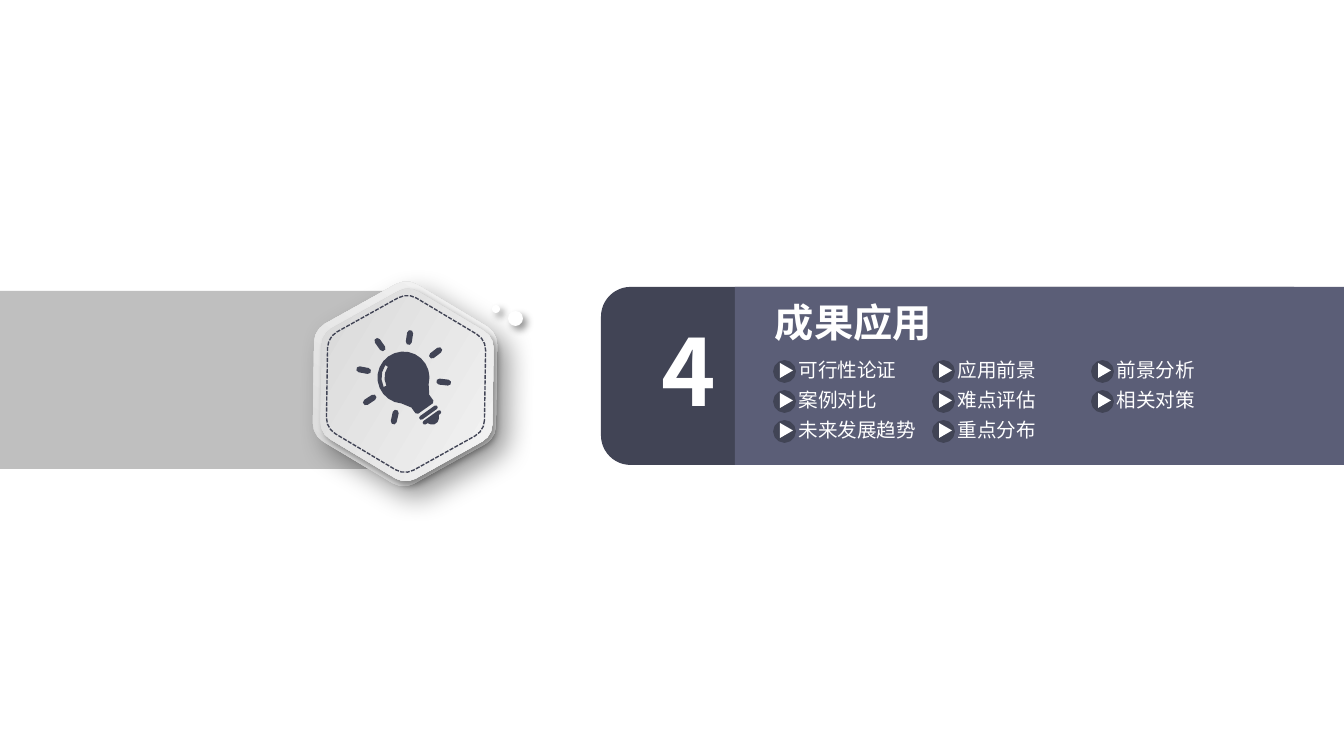
from dataclasses import dataclass
from math import atan2, cos, degrees, radians, sin, sqrt
from typing import Optional

from lxml.etree import SubElement
from pptx import Presentation
from pptx.dml.color import RGBColor
from pptx.enum.dml import MSO_LINE as Dash
from pptx.enum.shapes import MSO_SHAPE as Kind
from pptx.enum.text import MSO_AUTO_SIZE as Auto, PP_ALIGN as Align
from pptx.oxml.ns import qn
from pptx.util import Emu, Pt

SCALE = 9144000 / 1344
FONT = "Noto Sans CJK SC"
WHITE, DARK, SLATE, GREY = "FFFFFF", "414455", "5B5E77", "BFBFBF"
PALE, DIM = "F9F9F9", "D3D3D3"


@dataclass
class Shade:
    blur: int
    dist: int


@dataclass
class Plate:
    x: int
    y: int
    high: int
    angle: Optional[int] = None
    shade: Optional[Shade] = None


@dataclass
class Item:
    text: str
    col: int
    row: int


SOFT = Shade(4, 3)
PLATES = [
    Plate(405, 384, 183, 90, Shade(15, 9)),
    Plate(407, 385, 172, 0, SOFT),
    Plate(406, 384, 158),
]
ROWS = [
    ["可行性论证", "应用前景", "前景分析"],
    ["案例对比", "难点评估", "相关对策"],
    ["未来发展趋势", "重点分布"],
]
ITEMS = [Item(text, c, r) for r, row in enumerate(ROWS) for c, text in enumerate(row)]


def px(n: float) -> Emu:
    return Emu(round(n * SCALE))


def tint(code: str) -> RGBColor:
    return RGBColor.from_string(code)


def cast(shape, shade: Shade) -> None:
    box = shape._element.spPr.find(qn("a:effectLst"))
    drop = SubElement(box, qn("a:outerShdw"), blurRad=str(Pt(shade.blur)),
                      dist=str(Pt(shade.dist)), dir="2700000", algn="tl", rotWithShape="0")
    color = SubElement(drop, qn("a:srgbClr"), val="000000")
    SubElement(color, qn("a:alpha"), val="40000")


def style(shape, fill: Optional[str] = None, line: Optional[str] = None,
          width: float = 1, shade: Optional[Shade] = None) -> None:
    shape.shadow.inherit = False
    if fill:
        shape.fill.solid()
        shape.fill.fore_color.rgb = tint(fill)
    else:
        shape.fill.background()
    if line:
        shape.line.color.rgb = tint(line)
        shape.line.width = Pt(width)
    else:
        shape.line.fill.background()
    if shade:
        cast(shape, shade)


def block(slide, kind, x: int, y: int, w: int, h: int, turn: int = 0, **look) -> None:
    shape = slide.shapes.add_shape(kind, px(x), px(y), px(w), px(h))
    shape.rotation = turn
    style(shape, **look)


def label(slide, text: str, x: int, y: int, w: int, h: int, size: float,
          bold: bool = False, align=Align.LEFT, pad: tuple = (0, 0)) -> None:
    frame = slide.shapes.add_textbox(px(x), px(y), px(w), px(h)).text_frame
    frame.word_wrap = True
    frame.auto_size = Auto.SHAPE_TO_FIT_TEXT
    frame.margin_left = frame.margin_right = px(pad[0])
    frame.margin_top = frame.margin_bottom = px(pad[1])
    para = frame.paragraphs[0]
    para.alignment = align
    run = para.add_run()
    run.text = text
    font = run.font
    font.size, font.bold, font.name = Pt(size), bold, FONT
    font.color.rgb = tint(WHITE)
    SubElement(run._r.get_or_add_rPr(), qn("a:ea"), typeface=FONT)


def arc(x: float, y: float, r: float, start: float, end: float, steps: int = 3) -> list:
    turns = [radians(start + (end - start) * i / steps) for i in range(steps + 1)]
    return [(x + r * cos(t), y + r * sin(t)) for t in turns]


def pill(x1: float, y1: float, x2: float, y2: float, r: float) -> list:
    way = degrees(atan2(y2 - y1, x2 - x1))
    return arc(x2, y2, r, way - 90, way + 90) + arc(x1, y1, r, way + 90, way + 270)


def outline(slide, loops: list, x: int, y: int, turn: float):
    paths = [[(px(a), px(b)) for a, b in loop] for loop in loops]
    pen = slide.shapes.build_freeform(*paths[0][0], scale=1.0)
    for i, points in enumerate(paths):
        if i:
            pen.move_to(*points[0])
        pen.add_line_segments(points[1:], close=True)
    shape = pen.convert_to_shape()
    shape.left, shape.top = px(x) - shape.width // 2, px(y) - shape.height // 2
    shape.rotation = turn
    return shape


def hexagon(high: int) -> list:
    side = high / sqrt(3)
    bend = side * 0.2
    reach = side - bend / cos(radians(30))
    return [p for a in range(0, 360, 60)
            for p in arc(reach * cos(radians(a)), reach * sin(radians(a)), bend, a - 30, a + 30)]


def badge(slide, plate: Plate) -> None:
    shape = outline(slide, [hexagon(plate.high)], plate.x, plate.y, 30.9)
    if plate.angle is None:
        style(shape, line=DARK, width=0.75)
        shape.line.dash_style = Dash.SQUARE_DOT
        return
    style(shape, shade=plate.shade)
    shape.fill.gradient()
    shape.fill.gradient_angle = plate.angle
    for stop, code, place in zip(shape.fill.gradient_stops, (DIM, PALE), (0, 1)):
        stop.color.rgb = tint(code)
        stop.position = place


def bulb(slide) -> None:
    head = arc(0, 0, 26, 130, 410, 18) + [(11, 29), (11, 36), (9, 38), (-9, 38), (-11, 36), (-11, 29)]
    shine = arc(0, 0, 22, 190, 250) + arc(0, 0, 19, 250, 190)
    foot = pill(-9, 49, 9, 49, 2)
    tip = [(-7, 51), (7, 51), (5, 54), (2, 56), (-2, 56), (-5, 54)]
    rays = [pill(36 * c, 36 * s, 45 * c, 45 * s, 3)
            for c, s in ((cos(radians(a)), sin(radians(a))) for a in range(-222, 43, 44))]
    loops = [head, shine, pill(-9, 43, 9, 43, 2), foot, tip, *rays]
    style(outline(slide, loops, 406, 381, 324.5), fill=DARK)


def entry(slide, item: Item) -> None:
    x, y = 775 + 159 * item.col, 358 + 30 * item.row
    label(slide, item.text, x + 24, y, 167 if item.col == 2 else 134, 26, 10.5)
    block(slide, Kind.OVAL, x, y + 4, 19, 19, fill=DARK, line=DARK, width=2)
    block(slide, Kind.ISOSCELES_TRIANGLE, x + 4, y + 6, 15, 13, turn=90, fill=WHITE)


def main() -> None:
    deck = Presentation()
    deck.slide_width, deck.slide_height = px(1344), px(756)
    slide = deck.slides.add_slide(deck.slide_layouts[6])
    block(slide, Kind.RECTANGLE, 0, 291, 410, 178, fill=GREY)
    for plate in PLATES:
        badge(slide, plate)
    for x, y, size in ((492, 305, 8), (508, 311, 15)):
        block(slide, Kind.OVAL, x, y, size, size, fill=WHITE, shade=SOFT)
    block(slide, Kind.ROUNDED_RECTANGLE, 601, 287, 722, 178, fill=DARK)
    block(slide, Kind.RECTANGLE, 735, 287, 612, 178, fill=SLATE)
    label(slide, "4", 649, 307, 40, 125, 49.5, bold=True, align=Align.CENTER, pad=(13, 7))
    label(slide, "成果应用", 767, 294, 301, 58, 21, bold=True, pad=(8, 4))
    bulb(slide)
    for item in ITEMS:
        entry(slide, item)
    deck.save("out.pptx")


if __name__ == "__main__":
    main()
